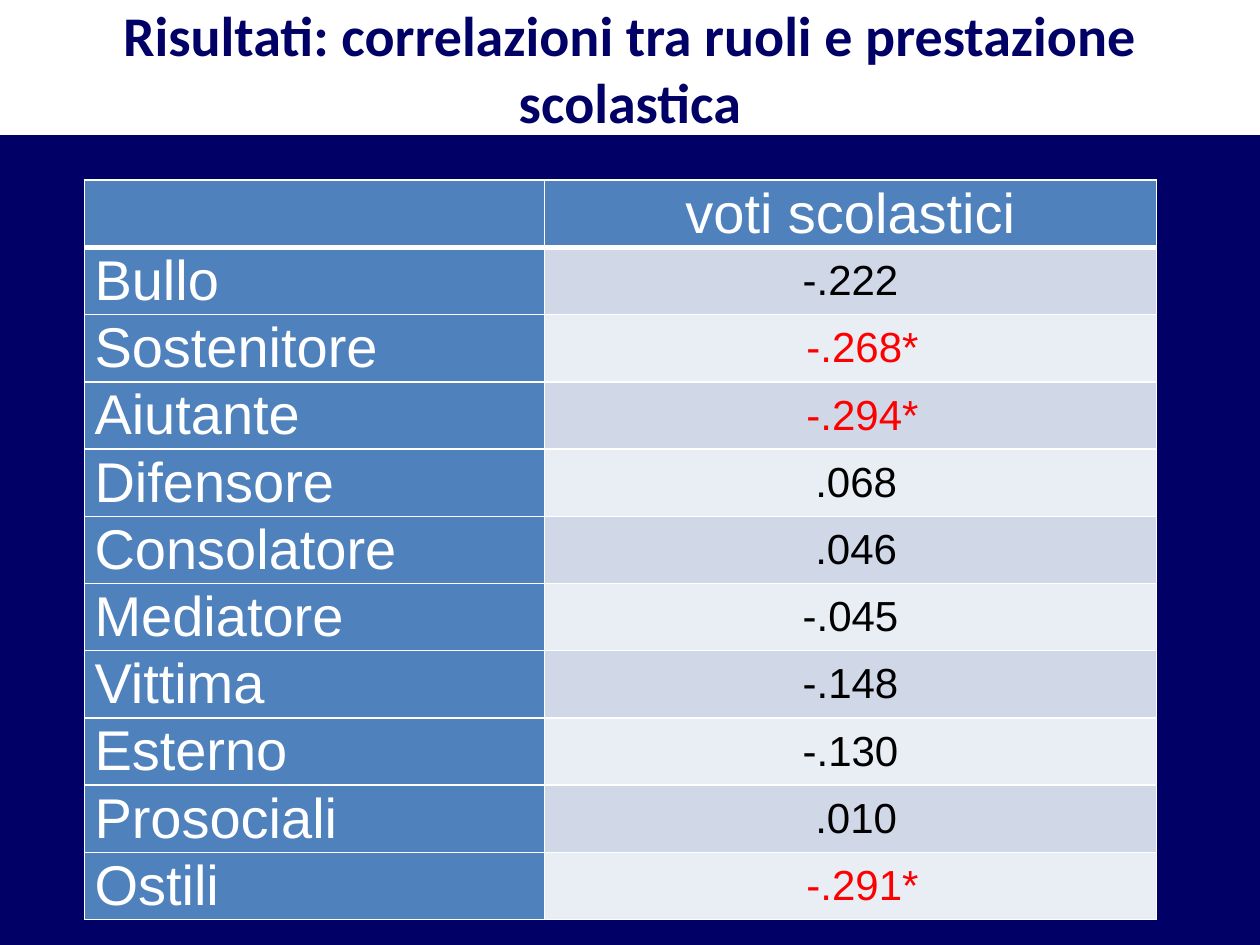
from lxml.etree import SubElement
from pptx import Presentation
from pptx.dml.color import RGBColor
from pptx.enum.text import MSO_ANCHOR, MSO_AUTO_SIZE, PP_ALIGN
from pptx.oxml.ns import qn
from pptx.util import Inches, Pt

HEADERS = ["", "voti scolastici"]
CORRELATIONS = [
    ("Bullo", "-.222"),
    ("Sostenitore", "-.268*"),
    ("Aiutante", "-.294*"),
    ("Difensore", ".068"),
    ("Consolatore", ".046"),
    ("Mediatore", "-.045"),
    ("Vittima", "-.148"),
    ("Esterno", "-.130"),
    ("Prosociali", ".010"),
    ("Ostili", "-.291*"),
]


def color(hex_value):
    return RGBColor.from_string(hex_value)


class SlideBuilder:
    NAVY, WHITE, BLACK, RED = "000066", "FFFFFF", "000000", "FF0000"
    HEADER_BLUE = "4F81BD"
    BANDS = ["D0D8E8", "E9EDF4"]
    CELL_MARGIN = 0.08

    def __init__(self, presentation):
        self.slide = presentation.slides.add_slide(presentation.slide_layouts[5])
        background = self.slide.background.fill
        background.solid()
        background.fore_color.rgb = color(self.NAVY)

    def format_text(self, frame, font_name, size, font_color, align, bold=False):
        paragraph = frame.paragraphs[0]
        paragraph.alignment = align
        for run in paragraph.runs:
            run.font.name = font_name
            run.font.size = Pt(size)
            run.font.bold = bold
            run.font.color.rgb = color(font_color)

    def title(self, text, left, top, width, height):
        heading = self.slide.shapes.title
        heading.left, heading.top = Inches(left), Inches(top)
        heading.width, heading.height = Inches(width), Inches(height)
        heading.fill.solid()
        heading.fill.fore_color.rgb = color(self.WHITE)
        frame = heading.text_frame
        frame.text = text
        frame.word_wrap = True
        frame.auto_size = MSO_AUTO_SIZE.NONE
        frame.vertical_anchor = MSO_ANCHOR.MIDDLE
        self.format_text(frame, "Calibri", 32, self.NAVY, PP_ALIGN.CENTER, bold=True)

    def borders(self, cell, top=1, bottom=1):
        properties = cell._tc.get_or_add_tcPr()
        for side, width in (("L", 1), ("R", 1), ("T", top), ("B", bottom)):
            line = SubElement(properties, qn(f"a:ln{side}"), w=str(Pt(width)))
            fill = SubElement(line, qn("a:solidFill"))
            SubElement(fill, qn("a:srgbClr"), val=self.WHITE)

    def cell(self, cell, text, fill, size, font_color, align, indent=0, top=1, bottom=1):
        self.borders(cell, top, bottom)
        cell.fill.solid()
        cell.fill.fore_color.rgb = color(fill)
        cell.margin_left = Inches(self.CELL_MARGIN + indent)
        cell.margin_right = Inches(self.CELL_MARGIN)
        cell.margin_top = cell.margin_bottom = 0
        cell.vertical_anchor = MSO_ANCHOR.MIDDLE
        cell.text_frame.text = text
        self.format_text(cell.text_frame, "Arial", size, font_color, align)

    def correlation_table(self, headers, rows, left, top, column_widths, height):
        row_count = len(rows) + 1
        table = self.slide.shapes.add_table(
            row_count, len(headers), Inches(left), Inches(top),
            Inches(sum(column_widths)), Inches(height)).table
        for column, width in zip(table.columns, column_widths):
            column.width = Inches(width)
        for row in table.rows:
            row.height = Inches(height / row_count)

        for column, header in enumerate(headers):
            self.cell(table.cell(0, column), header, self.HEADER_BLUE, 32,
                      self.WHITE, PP_ALIGN.CENTER, bottom=3)
        for number, (role, value) in enumerate(rows, start=1):
            top_line = 3 if number == 1 else 1
            self.cell(table.cell(number, 0), role, self.HEADER_BLUE, 32,
                      self.WHITE, PP_ALIGN.LEFT, top=top_line)
            # Indents line up the digits despite the minus sign and the asterisk
            significant = value.endswith("*")
            indent = 0.19 if significant else 0 if value.startswith("-") else 0.09
            self.cell(table.cell(number, 1), value, self.BANDS[(number - 1) % 2], 24,
                      self.RED if significant else self.BLACK,
                      PP_ALIGN.CENTER, indent, top=top_line)


def main():
    presentation = Presentation()
    presentation.slide_width, presentation.slide_height = Inches(10), Inches(7.5)
    builder = SlideBuilder(presentation)
    builder.title("Risultati: correlazioni tra ruoli e prestazione scolastica",
                  0, 0, 10, 1.07)
    builder.correlation_table(HEADERS, CORRELATIONS, 0.67, 1.43, [3.65, 4.86], 5.87)
    presentation.save("out.pptx")


if __name__ == "__main__":
    main()
